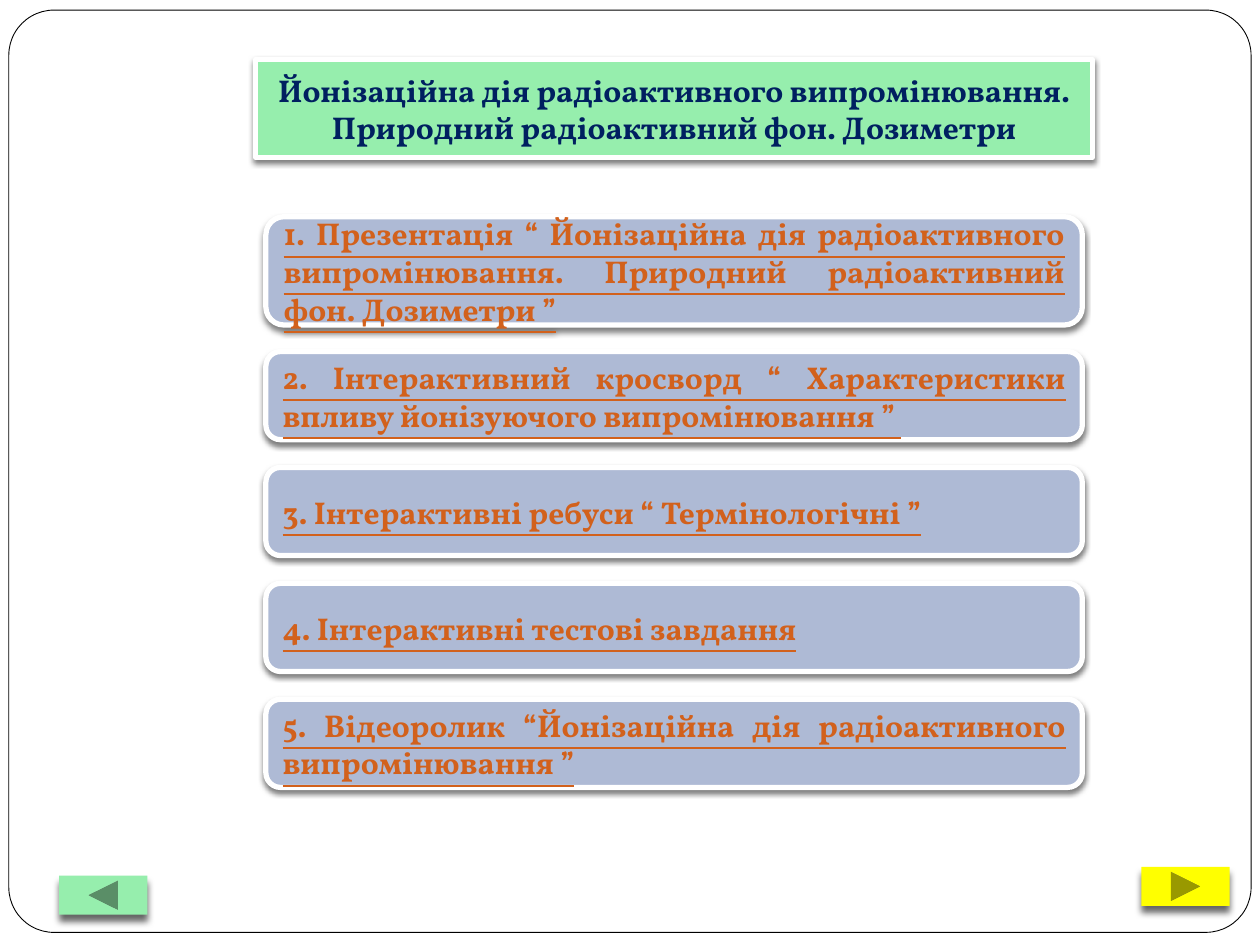
from lxml import etree
from pptx import Presentation
from pptx.dml.color import RGBColor
from pptx.enum.shapes import MSO_SHAPE
from pptx.enum.text import MSO_ANCHOR, MSO_AUTO_SIZE, PP_ALIGN
from pptx.oxml.ns import qn
from pptx.util import Inches, Pt

WHITE = RGBColor(0xFF, 0xFF, 0xFF)
BLACK = RGBColor(0, 0, 0)
GREEN = RGBColor(0x96, 0xEE, 0xAD)
YELLOW = RGBColor(0xFF, 0xFF, 0x00)
LILAC = RGBColor(0xAE, 0xBA, 0xD5)
NAVY = RGBColor(0x00, 0x20, 0x60)
ORANGE = RGBColor(0xD2, 0x61, 0x1C)


def paint(sp, fill, line_width=0, line=WHITE, shadow=None):
    """Set fill and line; shadow is (opacity %, blur pt, distance pt), cast downwards."""
    sp.fill.solid()
    sp.fill.fore_color.rgb = fill
    if line_width:
        sp.line.color.rgb = line
        sp.line.width = Pt(line_width)
    else:
        sp.line.fill.background()
    effects = sp._element.spPr.find(qn("a:effectLst"))
    if effects is None:
        effects = etree.SubElement(sp._element.spPr, qn("a:effectLst"))
    if shadow:
        opacity, blur, dist = shadow
        outer = etree.SubElement(effects, qn("a:outerShdw"), blurRad=str(Pt(blur)),
                                 dist=str(Pt(dist)), dir="5400000", algn="t", rotWithShape="0")
        color = etree.SubElement(outer, qn("a:srgbClr"), val=str(BLACK))
        etree.SubElement(color, qn("a:alpha"), val=str(opacity * 1000))


def write(sp, text, align, **font):
    tf = sp.text_frame
    tf.word_wrap = True
    tf.auto_size = MSO_AUTO_SIZE.NONE
    tf.vertical_anchor = MSO_ANCHOR.MIDDLE
    p = tf.paragraphs[0]
    p.alignment = align
    p.line_spacing = 1.0
    p.space_before = Pt(0)
    r = p.add_run()
    r.text = text
    r.font.color.rgb = font.pop("color")
    for name, value in {"name": "Vollkorn", "size": Pt(18), "bold": True, **font}.items():
        setattr(r.font, name, value)


prs = Presentation()
prs.slide_width, prs.slide_height = Inches(10), Inches(7.5)
s = prs.slides.add_slide(prs.slide_layouts[5])

# Slide frame, behind everything else
frame = s.shapes.add_shape(MSO_SHAPE.ROUNDED_RECTANGLE,
                           Inches(0.07), Inches(0.08), Inches(9.86), Inches(7.32))
frame.adjustments[0] = 0.049
frame.shadow.inherit = False
paint(frame, WHITE, 0.5, BLACK)
s.shapes._spTree.insert(2, frame._element)

# Title placeholder with rounded corners
title = s.shapes.title
title.left, title.top, title.width, title.height = (
    Inches(2.03), Inches(0.47), Inches(6.64), Inches(0.78))
geometry = etree.Element(qn("a:prstGeom"), prst="flowChartAlternateProcess")
etree.SubElement(geometry, qn("a:avLst"))
title._element.spPr.insert(1, geometry)
paint(title, GREEN, 3, shadow=(50, 3, 2))
write(title, "Йонізаційна дія радіоактивного випромінювання. Природний радіоактивний фон. Дозиметри",
      PP_ALIGN.CENTER, color=NAVY)

# Menu: the first entry is taller, the others follow at an equal pitch
entries = [
    "1. Презентація “ Йонізаційна дія радіоактивного випромінювання. "
    "Природний радіоактивний фон. Дозиметри ”",
    "2. Інтерактивний кросворд “ Характеристики впливу йонізуючого випромінювання ” ",
    "3. Інтерактивні ребуси “ Термінологічні ”",
    "4. Інтерактивні тестові завдання",
    "5. Відеоролик “Йонізаційна дія радіоактивного випромінювання ”",
]
for i, entry in enumerate(entries):
    top, height = (2.79 + 0.92 * (i - 1), 0.7) if i else (1.72, 0.86)
    sp = s.shapes.add_shape(MSO_SHAPE.FLOWCHART_ALTERNATE_PROCESS,
                            Inches(2.11), Inches(top), Inches(6.48), Inches(height))
    sp.shadow.inherit = False
    paint(sp, LILAC, 3, shadow=(50, 3, 2))
    write(sp, entry, PP_ALIGN.JUSTIFY, color=ORANGE, underline=True)

# Navigation buttons
for kind, left, top, fill in [
    (MSO_SHAPE.ACTION_BUTTON_FORWARD_OR_NEXT, 9.06, 6.88, YELLOW),
    (MSO_SHAPE.ACTION_BUTTON_BACK_OR_PREVIOUS, 0.47, 6.95, GREEN),
]:
    sp = s.shapes.add_shape(kind, Inches(left), Inches(top), Inches(0.7), Inches(0.31))
    sp.shadow.inherit = False
    paint(sp, fill, shadow=(60, 4, 4))

prs.save("out.pptx")
